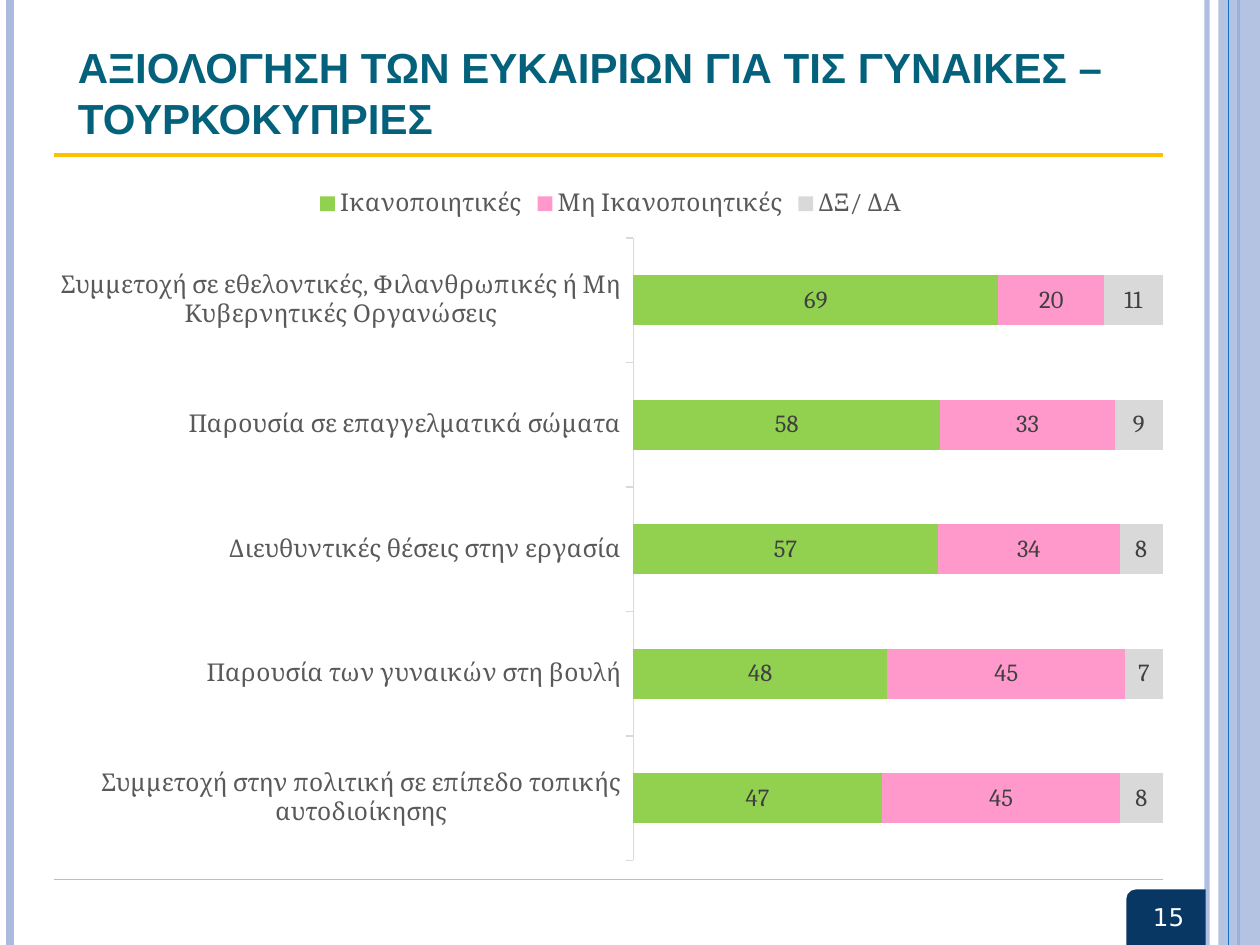
from dataclasses import dataclass

from lxml import etree
from pptx import Presentation
from pptx.chart.data import CategoryChartData
from pptx.dml.color import RGBColor
from pptx.enum.chart import XL_CHART_TYPE, XL_LABEL_POSITION, XL_LEGEND_POSITION, XL_TICK_MARK
from pptx.enum.shapes import MSO_CONNECTOR, MSO_SHAPE
from pptx.enum.text import MSO_ANCHOR, PP_ALIGN
from pptx.oxml.ns import qn
from pptx.util import Inches, Pt

STACKED = XL_CHART_TYPE.BAR_STACKED_100
CENTER_LABEL = XL_LABEL_POSITION.CENTER
TOP = XL_LEGEND_POSITION.TOP
TICK_OUT, TICK_NONE = XL_TICK_MARK.OUTSIDE, XL_TICK_MARK.NONE
STRAIGHT = MSO_CONNECTOR.STRAIGHT
RECT, ROUND_TAB = MSO_SHAPE.RECTANGLE, MSO_SHAPE.ROUND_1_RECTANGLE
BOTTOM, MIDDLE = MSO_ANCHOR.BOTTOM, MSO_ANCHOR.MIDDLE
LEFT, CENTER = PP_ALIGN.LEFT, PP_ALIGN.CENTER

PERIWINKLE = RGBColor(0xAB, 0xBB, 0xDF)
BLUE = RGBColor(0x0F, 0x6F, 0xC6)
NAVY = RGBColor(0x08, 0x37, 0x63)
TEAL = RGBColor(0x04, 0x61, 0x7B)
GOLD = RGBColor(0xFF, 0xC0, 0x00)
WHITE = RGBColor(0xFF, 0xFF, 0xFF)
BLACK = RGBColor(0x00, 0x00, 0x00)
GREEN = RGBColor(0x92, 0xD0, 0x50)
PINK = RGBColor(0xFF, 0x99, 0xCC)
SILVER = RGBColor(0xD9, 0xD9, 0xD9)
GREY = RGBColor(0x59, 0x59, 0x59)
DARK_GREY = RGBColor(0x40, 0x40, 0x40)

COLS, ROWS = 100, 75
WIDTH, HEIGHT = Inches(10), Inches(7.5)


@dataclass(frozen=True)
class Box:
    col: float
    row: float
    cols: float
    rows: float

    def emu(self) -> tuple:
        x, y = WIDTH / COLS, HEIGHT / ROWS
        return (round(self.col * x), round(self.row * y),
                round(self.cols * x), round(self.rows * y))


@dataclass(frozen=True)
class Rule:
    box: Box
    color: RGBColor
    weight: float
    opacity: int = 100


@dataclass(frozen=True)
class Panel:
    box: Box
    shape: MSO_SHAPE
    color: RGBColor
    opacity: int = 100
    flipped: bool = False


@dataclass(frozen=True)
class Label:
    box: Box
    text: str
    font: dict
    anchor: MSO_ANCHOR
    align: PP_ALIGN


@dataclass(frozen=True)
class Answer:
    name: str
    values: tuple
    color: RGBColor


def vertical(col: float, color: RGBColor, weight: float, opacity: int = 100) -> Rule:
    return Rule(Box(col, 0, 0, ROWS), color, weight, opacity)


def horizontal(row: float, weight: float) -> Rule:
    return Rule(Box(4.3, row, 88, 0), GOLD, weight)


def chart_font(color: RGBColor) -> dict:
    return {"size": Pt(14), "name": "Cambria", "color": color, "bold": False}


DECOR = (
    vertical(95.8, PERIWINKLE, 3, 93),
    vertical(0.8, PERIWINKLE, 4.5),
    vertical(98.3, BLUE, 1.5),
    Panel(Box(96.7, 0, 3.3, ROWS), RECT, PERIWINKLE, 87),
    vertical(97.5, BLUE, 0.75),
    Panel(Box(89.4, 70.6, 6.3, 4.4), ROUND_TAB, NAVY, flipped=True),
    horizontal(12.3, 2.25),
    horizontal(69.8, 1),
)
LABELS = (
    Label(Box(5.2, 6, 87.4, 5.8),
          "ΑΞΙΟΛΟΓΗΣΗ ΤΩΝ ΕΥΚΑΙΡΙΩΝ ΓΙΑ ΤΙΣ ΓΥΝΑΙΚΕΣ – ΤΟΥΡΚΟΚΥΠΡΙΕΣ",
          {"size": Pt(24), "name": "Arial", "color": TEAL, "bold": True}, BOTTOM, LEFT),
    Label(Box(89.4, 69.4, 6.7, 6.7), "15",
          {"size": Pt(14), "name": "DejaVu Sans", "color": WHITE}, MIDDLE, CENTER),
)
CHART_BOX = Box(2.8, 13.9, 91.3, 55.5)
PLOT_SHARES = {"x": 0.52, "y": 0.09, "w": 0.46, "h": 0.89}
CATEGORIES = (
    "Συμμετοχή στην πολιτική σε επίπεδο τοπικής αυτοδιοίκησης",
    "Παρουσία των γυναικών στη βουλή",
    "Διευθυντικές θέσεις στην εργασία",
    "Παρουσία σε επαγγελματικά σώματα",
    "Συμμετοχή σε εθελοντικές, Φιλανθρωπικές ή Μη Κυβερνητικές Οργανώσεις",
)
ANSWERS = (
    Answer("Ικανοποιητικές", (47, 48, 57, 58, 69), GREEN),
    Answer("Μη Ικανοποιητικές", (45, 45, 34, 33, 20), PINK),
    Answer("ΔΞ/ ΔΑ", (8, 7, 8, 9, 11), SILVER),
)


def set_values(target, values: dict) -> None:
    for name, value in values.items():
        if name == "color":
            target.color.rgb = value
        else:
            setattr(target, name, value)


def set_opacity(sp, percent: int) -> None:
    if percent < 100:
        color = next(sp._element.spPr.iter(qn("a:srgbClr")))
        etree.SubElement(color, qn("a:alpha"), val=str(percent * 1000))


def draw_rule(s, rule: Rule) -> None:
    x, y, w, h = rule.box.emu()
    sp = s.shapes.add_connector(STRAIGHT, x, y, x + w, y + h)
    set_values(sp.line, {"color": rule.color, "width": Pt(rule.weight)})
    set_opacity(sp, rule.opacity)
    etree.SubElement(sp._element.spPr, qn("a:effectLst"))


def draw_panel(s, panel: Panel) -> None:
    sp = s.shapes.add_shape(panel.shape, *panel.box.emu())
    sp.shadow.inherit = False
    sp.fill.solid()
    sp.fill.fore_color.rgb = panel.color
    sp.line.fill.background()
    set_opacity(sp, panel.opacity)
    if panel.flipped:
        sp._element.spPr.find(qn("a:xfrm")).set("flipH", "1")


def draw_label(s, label: Label) -> None:
    tf = s.shapes.add_textbox(*label.box.emu()).text_frame
    set_values(tf, {"word_wrap": True, "vertical_anchor": label.anchor})
    p = tf.paragraphs[0]
    p.alignment = label.align
    r = p.add_run()
    r.text = label.text
    set_values(r.font, {k: v for k, v in label.font.items() if k != "color"})
    r.font.color.rgb = label.font["color"]


def place_plot(chart, shares: dict) -> None:
    area = chart._chartSpace.chart.plotArea
    layout = area.find(qn("c:layout"))
    if layout is None:
        layout = etree.Element(qn("c:layout"))
        area.insert(0, layout)
    manual = etree.SubElement(layout, qn("c:manualLayout"))
    settings = {"layoutTarget": "inner", "xMode": "edge", "yMode": "edge", **shares}
    for name, value in settings.items():
        etree.SubElement(manual, qn(f"c:{name}"), val=str(value))


def draw_chart(s) -> None:
    data = CategoryChartData(number_format="0")
    data.categories = CATEGORIES
    for answer in ANSWERS:
        data.add_series(answer.name, answer.values)
    chart = s.shapes.add_chart(STACKED, *CHART_BOX.emu(), data).chart
    set_values(chart, {"has_title": False, "has_legend": True})
    set_values(chart.legend, {"position": TOP, "include_in_layout": False})
    cat, val = chart.category_axis, chart.value_axis
    set_values(cat, {"major_tick_mark": TICK_OUT, "minor_tick_mark": TICK_NONE})
    set_values(cat.format.line, {"color": SILVER, "width": Pt(0.75)})
    set_values(val, {"minimum_scale": 0, "maximum_scale": 1, "major_unit": 1,
                     "has_major_gridlines": False, "visible": False})
    plot = chart.plots[0]
    set_values(plot, {"gap_width": 150, "overlap": 100, "vary_by_categories": False})
    fonts = [(chart.font, BLACK), (chart.legend.font, GREY), (cat.tick_labels.font, GREY)]
    for series, answer in zip(plot.series, ANSWERS):
        series.format.fill.solid()
        series.format.fill.fore_color.rgb = answer.color
        labels = series.data_labels
        set_values(labels, {"show_value": True, "position": CENTER_LABEL})
        fonts.append((labels.font, DARK_GREY))
    for font, color in fonts:
        set_values(font, {k: v for k, v in chart_font(color).items() if k != "color"})
        font.color.rgb = color
    place_plot(chart, PLOT_SHARES)


def main() -> None:
    prs = Presentation()
    set_values(prs, {"slide_width": WIDTH, "slide_height": HEIGHT})
    s = prs.slides.add_slide(prs.slide_layouts[6])
    for item in DECOR:
        (draw_rule if isinstance(item, Rule) else draw_panel)(s, item)
    for label in LABELS:
        draw_label(s, label)
    draw_chart(s)
    prs.save("out.pptx")


if __name__ == "__main__":
    main()
